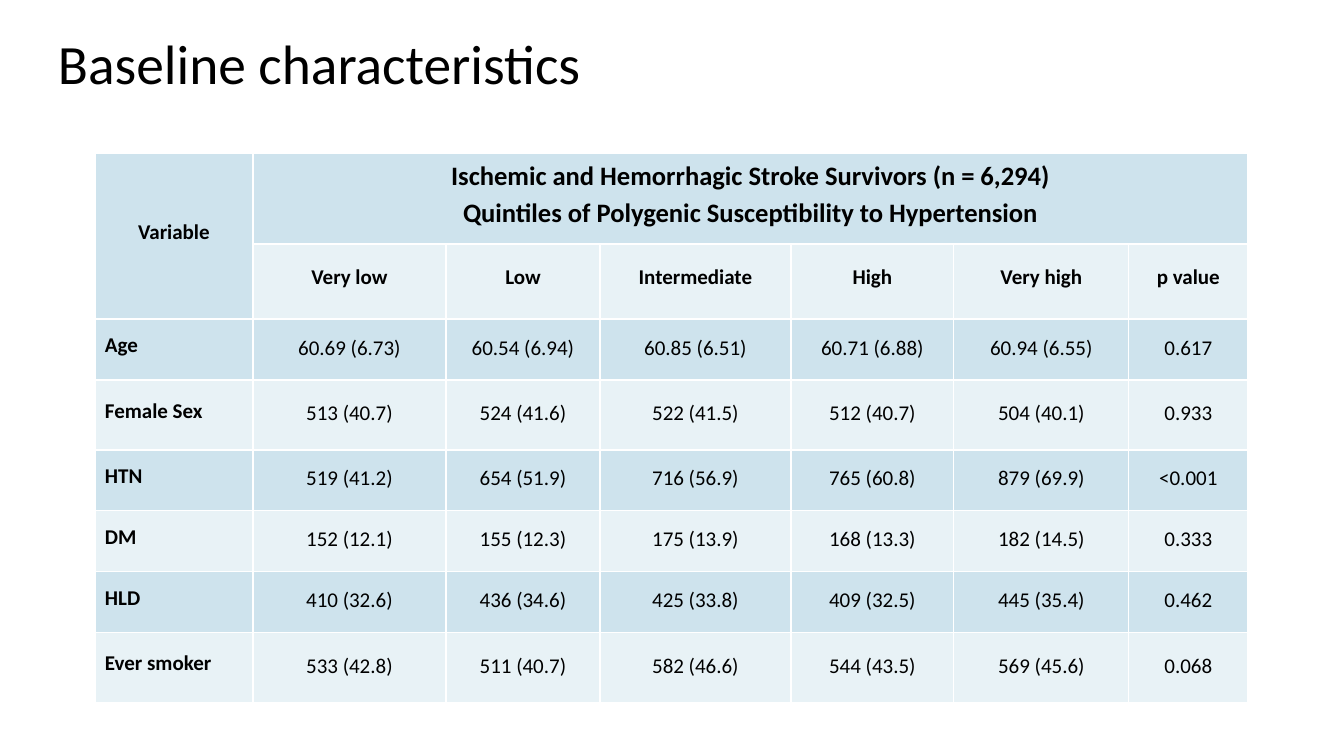
from lxml.etree import SubElement
from pptx import Presentation
from pptx.dml.color import RGBColor
from pptx.enum.text import MSO_ANCHOR, PP_ALIGN
from pptx.oxml.ns import qn
from pptx.util import Pt

EMU_PER_PX = 914400 / 100.8
FONT = "Calibri"
BLACK = RGBColor(0x00, 0x00, 0x00)
WHITE = RGBColor(0xFF, 0xFF, 0xFF)
BANDS = (RGBColor(0xCE, 0xE3, 0xED), RGBColor(0xE8, 0xF2, 0xF6))

COLUMN_WIDTHS = (158, 193, 154, 191, 163, 175, 119)
ROW_HEIGHTS = (91, 75, 61, 70, 61, 61, 61, 70)
HEADER_MARGINS = (1, 1, 1, 13)
LABEL_MARGINS = (10, 1, 1, 13)
VALUE_MARGINS = (2, 2, 2, 9)

COHORT_HEADING = (
    "Ischemic and Hemorrhagic Stroke Survivors (n = 6,294)\n"
    "Quintiles of Polygenic Susceptibility to Hypertension"
)
QUINTILES = ("Very low", "Low", "Intermediate", "High", "Very high", "p value")
CHARACTERISTICS = (
    ("Age", "60.69 (6.73)", "60.54 (6.94)", "60.85 (6.51)",
     "60.71 (6.88)", "60.94 (6.55)", "0.617"),
    ("Female Sex", "513 (40.7)", "524 (41.6)", "522 (41.5)",
     "512 (40.7)", "504 (40.1)", "0.933"),
    ("HTN", "519 (41.2)", "654 (51.9)", "716 (56.9)",
     "765 (60.8)", "879 (69.9)", "<0.001"),
    ("DM", "152 (12.1)", "155 (12.3)", "175 (13.9)",
     "168 (13.3)", "182 (14.5)", "0.333"),
    ("HLD", "410 (32.6)", "436 (34.6)", "425 (33.8)",
     "409 (32.5)", "445 (35.4)", "0.462"),
    ("Ever smoker", "533 (42.8)", "511 (40.7)", "582 (46.6)",
     "544 (43.5)", "569 (45.6)", "0.068"),
)


def px(length):
    return round(length * EMU_PER_PX)


def set_margins(holder, left, top, right, bottom):
    holder.margin_left, holder.margin_top = px(left), px(top)
    holder.margin_right, holder.margin_bottom = px(right), px(bottom)


def style_paragraph(paragraph, size, bold, align, line_spacing):
    paragraph.alignment = align
    paragraph.line_spacing = line_spacing
    paragraph.font.name = FONT
    paragraph.font.size = Pt(size)
    paragraph.font.bold = bold
    paragraph.font.color.rgb = BLACK


def add_title(slide, text):
    title = slide.shapes.add_textbox(px(45), px(24), px(1252), px(85))
    frame = title.text_frame
    frame.word_wrap = True
    frame.vertical_anchor = MSO_ANCHOR.MIDDLE
    set_margins(frame, 13, 13, 13, 13)
    frame.text = text
    style_paragraph(frame.paragraphs[0], 39.6, False, PP_ALIGN.LEFT, 0.9)


def paint_cell(cell, band):
    """Draw the white cell borders, then the band fill."""
    properties = cell._tc.get_or_add_tcPr()
    for side in ("a:lnL", "a:lnR", "a:lnT", "a:lnB"):
        border = SubElement(properties, qn(side), w=str(Pt(1)))
        fill = SubElement(border, qn("a:solidFill"))
        SubElement(fill, qn("a:srgbClr"), val=str(WHITE))
    cell.fill.solid()
    cell.fill.fore_color.rgb = band


def write_cell(cell, text, margins, size=15, bold=True, align=PP_ALIGN.CENTER):
    cell.vertical_anchor = MSO_ANCHOR.MIDDLE
    set_margins(cell, *margins)
    cell.text = text
    for paragraph in cell.text_frame.paragraphs:
        style_paragraph(paragraph, size, bold, align, 1.15)


def add_characteristics_table(slide):
    table = slide.shapes.add_table(
        len(ROW_HEIGHTS), len(COLUMN_WIDTHS), px(95), px(153),
        px(sum(COLUMN_WIDTHS)), px(sum(ROW_HEIGHTS)),
    ).table
    table.first_row = table.horz_banding = False
    for column, width in zip(table.columns, COLUMN_WIDTHS):
        column.width = px(width)
    for index, (row, height) in enumerate(zip(table.rows, ROW_HEIGHTS)):
        row.height = px(height)
        for cell in row.cells:
            paint_cell(cell, BANDS[index % 2])

    table.cell(0, 0).merge(table.cell(1, 0))
    table.cell(0, 1).merge(table.cell(0, len(QUINTILES)))
    write_cell(table.cell(0, 0), "Variable", HEADER_MARGINS)
    write_cell(table.cell(0, 1), COHORT_HEADING, HEADER_MARGINS, size=19)
    for column, quintile in enumerate(QUINTILES, start=1):
        write_cell(table.cell(1, column), quintile, HEADER_MARGINS)
    for row, (label, *values) in enumerate(CHARACTERISTICS, start=2):
        write_cell(table.cell(row, 0), label, LABEL_MARGINS, align=PP_ALIGN.LEFT)
        for column, value in enumerate(values, start=1):
            write_cell(table.cell(row, column), value, VALUE_MARGINS, bold=False)


def main():
    presentation = Presentation()
    presentation.slide_width = px(1344)
    presentation.slide_height = px(756)
    slide = presentation.slides.add_slide(presentation.slide_layouts[6])
    add_characteristics_table(slide)
    add_title(slide, "Baseline characteristics")
    presentation.save("out.pptx")


if __name__ == "__main__":
    main()
